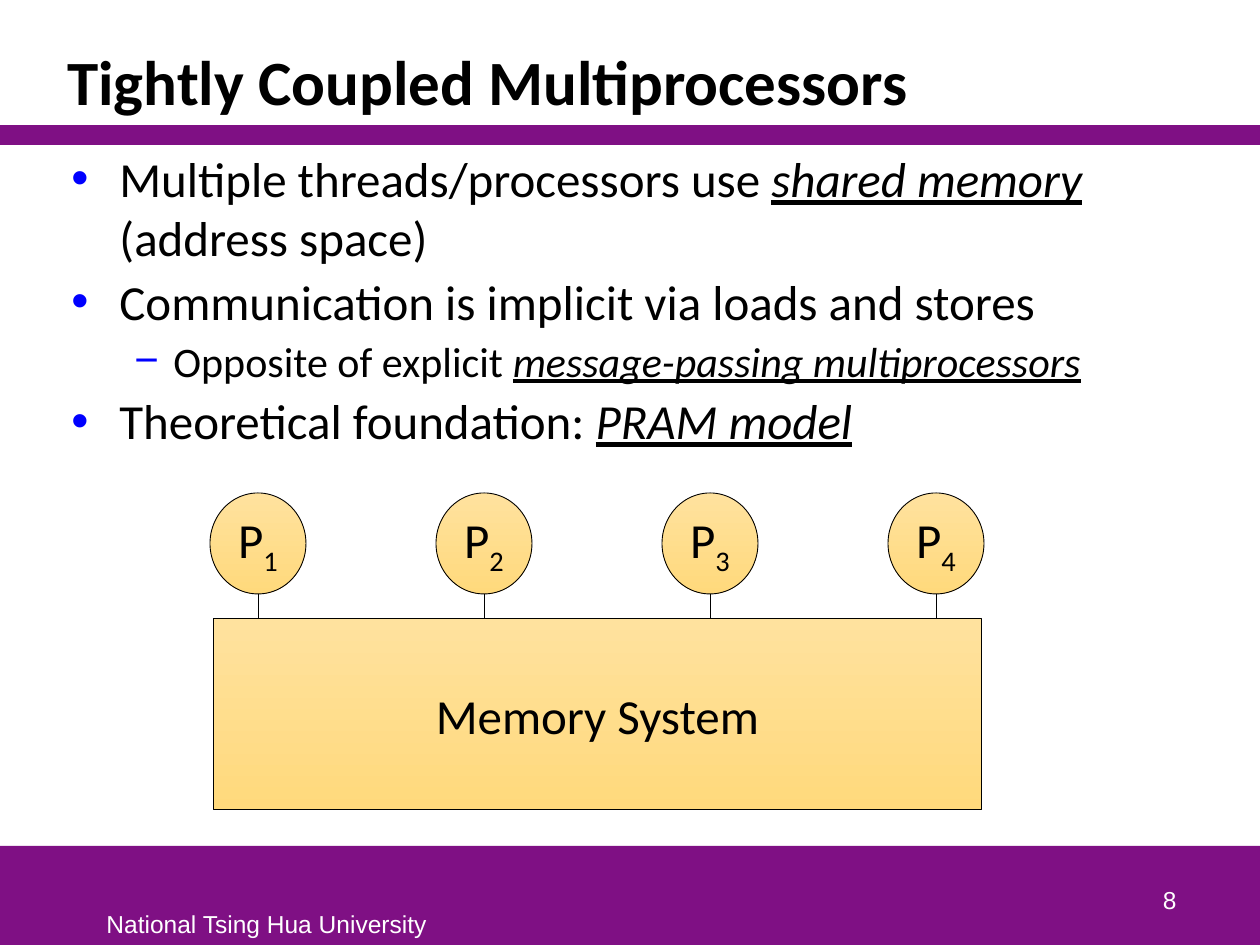
from lxml import etree
from pptx import Presentation
from pptx.dml.color import RGBColor
from pptx.enum.shapes import MSO_CONNECTOR, MSO_SHAPE
from pptx.enum.text import MSO_ANCHOR, PP_ALIGN
from pptx.oxml.ns import qn
from pptx.util import Emu, Pt

PURPLE = RGBColor(0x7F, 0x10, 0x84)
BLACK = RGBColor(0, 0, 0)
WHITE = RGBColor(255, 255, 255)
LIGHT_GOLD = RGBColor(0xFF, 0xE2, 0x9E)
GOLD = RGBColor(0xFF, 0xD9, 0x7C)
BULLET_BLUE = "0000FF"

TITLE = "Tightly Coupled Multiprocessors"
# Level, then (text, emphasised) runs
BULLETS = [
    (0, [("Multiple threads/processors use ", False), ("shared memory", True),
         (" (address space)", False)]),
    (0, [("Communication is implicit via loads and stores", False)]),
    (1, [("Opposite of explicit ", False), ("message-passing multiprocessors", True)]),
    (0, [("Theoretical foundation: ", False), ("PRAM model", True)]),
]
# Per level: bullet, font size, left margin and hanging indent in px
LEVELS = [("•", 28, 48, 48), ("−", 24, 102, 39)]
PROCESSORS = ["1", "2", "3", "4"]
MEMORY = "Memory System"
UNIVERSITY = "National Tsing Hua University"
PAGE_NUMBER = "8"

BARS = [(0, 846, 1260, 99), (0, 125, 1260, 20)]
FIRST_CENTRE, PROCESSOR_PITCH = 258, 226
PROCESSOR_TOP, PROCESSOR_WIDTH, PROCESSOR_HEIGHT = 493, 96, 101
LINK_TOP = 583
MEMORY_BOX = (213, 619, 769, 191)


def px(value):
    return Emu(round(value * 914400 / 126))


def set_font(paragraph, size, name="Calibri", color=BLACK):
    paragraph.font.size = Pt(size)
    paragraph.font.name = name
    paragraph.font.color.rgb = color


def add_text(slide, box, text, size, name="Calibri", color=BLACK,
             anchor=MSO_ANCHOR.TOP, align=PP_ALIGN.LEFT, wrap=True):
    frame = slide.shapes.add_textbox(*map(px, box)).text_frame
    frame.word_wrap = wrap
    frame.vertical_anchor = anchor
    paragraph = frame.paragraphs[0]
    paragraph.text = text
    paragraph.alignment = align
    set_font(paragraph, size, name, color)
    return paragraph


def add_bar(slide, box):
    bar = slide.shapes.add_shape(MSO_SHAPE.RECTANGLE, *map(px, box))
    bar.shadow.inherit = False
    bar.fill.solid()
    bar.fill.fore_color.rgb = PURPLE
    bar.line.fill.background()


def add_bullets(slide, box):
    frame = slide.shapes.add_textbox(*map(px, box)).text_frame
    frame.word_wrap = True
    for index, (level, runs) in enumerate(BULLETS):
        bullet, size, margin, hanging = LEVELS[level]
        paragraph = frame.add_paragraph() if index else frame.paragraphs[0]
        paragraph.level = level
        if index:
            paragraph.space_before = Pt(3)
        properties = paragraph._p.get_or_add_pPr()
        properties.set("marL", str(px(margin)))
        properties.set("indent", str(-px(hanging)))
        bullet_color = etree.SubElement(properties, qn("a:buClr"))
        etree.SubElement(bullet_color, qn("a:srgbClr"), val=BULLET_BLUE)
        etree.SubElement(properties, qn("a:buFont"), typeface="Arial")
        etree.SubElement(properties, qn("a:buChar"), char=bullet)
        set_font(paragraph, size)
        for text, emphasised in runs:
            run = paragraph.add_run()
            run.text = text
            if emphasised:
                run.font.italic = run.font.underline = True


def add_gold_shape(slide, kind, box, text, subscript="", wrap=True):
    shape = slide.shapes.add_shape(kind, *map(px, box))
    shape.shadow.inherit = False
    shape.fill.gradient()
    shape.fill.gradient_angle = 270
    for stop, color in zip(shape.fill.gradient_stops, (LIGHT_GOLD, GOLD)):
        stop.color.rgb = color
    shape.line.color.rgb = BLACK
    shape.line.width = Pt(0.5)
    frame = shape.text_frame
    frame.word_wrap = wrap
    frame.vertical_anchor = MSO_ANCHOR.MIDDLE
    paragraph = frame.paragraphs[0]
    paragraph.text = text
    paragraph.alignment = PP_ALIGN.CENTER
    set_font(paragraph, 28)
    if subscript:
        run = paragraph.add_run()
        run.text = subscript
        run.font._element.set("baseline", "-25000")


def add_link(slide, x, top, bottom):
    link = slide.shapes.add_connector(
        MSO_CONNECTOR.STRAIGHT, px(x), px(top), px(x), px(bottom))
    link.line.color.rgb = BLACK
    link.line.width = Pt(0.5)
    etree.SubElement(link._element.spPr, qn("a:effectLst"))


def main():
    presentation = Presentation()
    presentation.slide_width, presentation.slide_height = px(1260), px(945)
    slide = presentation.slides.add_slide(presentation.slide_layouts[6])

    for box in BARS:
        add_bar(slide, box)
    add_text(slide, (94, 903, 348, 42), UNIVERSITY, 14, "Arial", WHITE, wrap=False)
    title = add_text(slide, (55, 32, 1130, 93), TITLE, 36, anchor=MSO_ANCHOR.BOTTOM)
    title.font.bold = True
    title.line_spacing = 0.85
    add_bullets(slide, (59, 142, 1126, 697))

    for index, number in enumerate(PROCESSORS):
        centre = FIRST_CENTRE + index * PROCESSOR_PITCH
        add_link(slide, centre, LINK_TOP, MEMORY_BOX[1])
        box = (centre - PROCESSOR_WIDTH / 2, PROCESSOR_TOP,
               PROCESSOR_WIDTH, PROCESSOR_HEIGHT)
        add_gold_shape(slide, MSO_SHAPE.OVAL, box, "P", number, wrap=False)
    add_gold_shape(slide, MSO_SHAPE.RECTANGLE, MEMORY_BOX, MEMORY)
    add_text(slide, (927, 858, 262, 63), PAGE_NUMBER, 14, "Arial", WHITE,
             MSO_ANCHOR.BOTTOM, PP_ALIGN.RIGHT)
    presentation.save("out.pptx")


if __name__ == "__main__":
    main()
